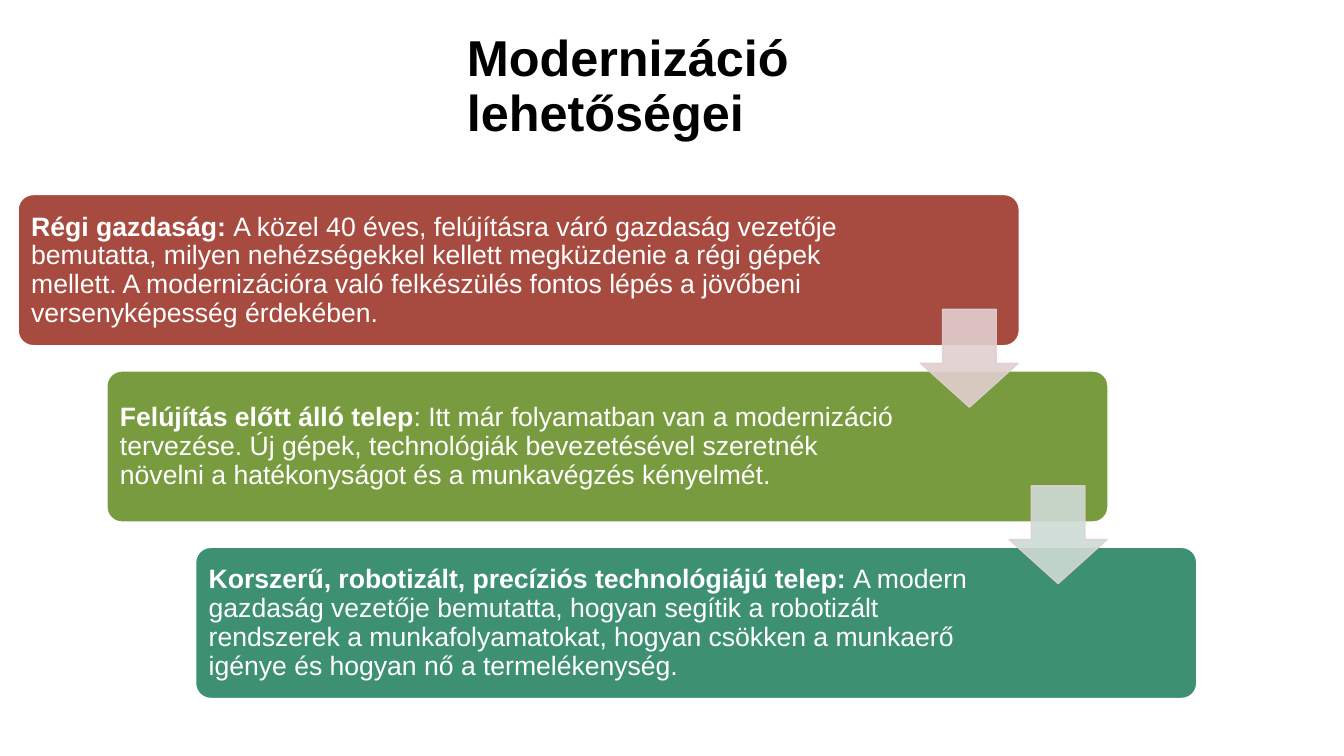
from dataclasses import dataclass

from lxml.etree import SubElement
from pptx import Presentation
from pptx.dml.color import RGBColor
from pptx.enum.shapes import MSO_SHAPE
from pptx.enum.text import MSO_ANCHOR, MSO_AUTO_SIZE, PP_ALIGN
from pptx.oxml.ns import qn
from pptx.util import Inches, Pt


@dataclass(frozen=True)
class Theme:
    """Colours, font and type sizes of the slide."""
    font: str = "Arial"
    title_size: int = 36
    body_size: int = 19
    title_color: str = "000000"
    body_color: str = "FFFFFF"
    step_edge: str = "FFFFFF"
    arrow_edge: str = "E1D0CF"
    step_fills: tuple = ("A74B40", "799B3F", "3D9072")
    arrow_fills: tuple = ("E1D0CF", "CEDBD5")
    arrow_opacity: int = 90


THEME = Theme()
TITLE = "Modernizáció lehetőségei"
STEPS = (
    ("Régi gazdaság: ",
     "A közel 40 éves, felújításra váró gazdaság vezetője bemutatta, milyen "
     "nehézségekkel kellett megküzdenie a régi gépek mellett. A modernizációra "
     "való felkészülés fontos lépés a jövőbeni versenyképesség érdekében.", 8.31),
    ("Felújítás előtt álló telep",
     ": Itt már folyamatban van a modernizáció tervezése. Új gépek, technológiák "
     "bevezetésével szeretnék növelni a hatékonyságot és a munkavégzés kényelmét.",
     7.99),
    ("Korszerű, robotizált, precíziós technológiájú telep: ",
     "A modern gazdaság vezetője bemutatta, hogyan segítik a robotizált rendszerek "
     "a munkafolyamatokat, hogyan csökken a munkaerő igénye és hogyan nő a "
     "termelékenység.", 7.99),
)
STEP_LEFT, STEP_TOP, STEP_WIDTH, STEP_HEIGHT = 0.18, 1.93, 9.93, 1.5
SHIFT_X, SHIFT_Y = 0.88, 1.75
ARROW_LEFT, ARROW_TOP, ARROW_SIZE = 9.13, 3.07, 0.97
TEXT_OFFSET, TEXT_HEIGHT, TEXT_INSET = 0.05, 1.41, 0.08


def add_run(paragraph, text, size, color, bold):
    """Append one formatted run to a paragraph."""
    run = paragraph.add_run()
    run.text = text
    run.font.name = THEME.font
    run.font.size = Pt(size)
    run.font.bold = bold
    run.font.color.rgb = RGBColor.from_string(color)


def add_block(slide, preset, box, fill, edge, adjustments):
    """Add a filled preset shape with a thin outline."""
    block = slide.shapes.add_shape(preset, *map(Inches, box))
    block.shadow.inherit = False
    block.fill.solid()
    block.fill.fore_color.rgb = RGBColor.from_string(fill)
    block.line.color.rgb = RGBColor.from_string(edge)
    block.line.width = Pt(1)
    for position, value in enumerate(adjustments):
        block.adjustments[position] = value
    return block


def set_title(slide):
    """Place and format the title placeholder."""
    title = slide.shapes.title
    title.left, title.top = Inches(4.53), Inches(0.28)
    title.width, title.height = Inches(3.82), Inches(1.37)
    frame = title.text_frame
    frame.word_wrap = True
    frame.auto_size = MSO_AUTO_SIZE.NONE
    frame.vertical_anchor = MSO_ANCHOR.TOP
    heading = frame.paragraphs[0]
    heading.alignment = PP_ALIGN.LEFT
    heading.line_spacing = 0.9
    add_run(heading, TITLE, THEME.title_size, THEME.title_color, True)


def add_step(slide, index, label, description, text_width):
    """Add one stair step with its bold label and description."""
    left, top = STEP_LEFT + index * SHIFT_X, STEP_TOP + index * SHIFT_Y
    add_block(slide, MSO_SHAPE.ROUNDED_RECTANGLE,
              (left, top, STEP_WIDTH, STEP_HEIGHT),
              THEME.step_fills[index], THEME.step_edge, (0.1,))
    caption = slide.shapes.add_textbox(
        Inches(left + TEXT_OFFSET), Inches(top + TEXT_OFFSET),
        Inches(text_width), Inches(TEXT_HEIGHT))
    frame = caption.text_frame
    frame.word_wrap = True
    frame.vertical_anchor = MSO_ANCHOR.MIDDLE
    frame.margin_left = frame.margin_right = Inches(TEXT_INSET)
    frame.margin_top = frame.margin_bottom = Inches(TEXT_INSET)
    paragraph = frame.paragraphs[0]
    paragraph.line_spacing = 0.9
    add_run(paragraph, label, THEME.body_size, THEME.body_color, True)
    add_run(paragraph, description, THEME.body_size, THEME.body_color, False)


def add_arrow(slide, index):
    """Add a translucent arrow leading to the next step."""
    box = (ARROW_LEFT + index * SHIFT_X, ARROW_TOP + index * SHIFT_Y,
           ARROW_SIZE, ARROW_SIZE)
    arrow = add_block(slide, MSO_SHAPE.DOWN_ARROW, box,
                      THEME.arrow_fills[index], THEME.arrow_edge, (0.55, 0.45))
    for color in arrow.element.spPr.iter(qn("a:srgbClr")):
        SubElement(color, qn("a:alpha"), val=str(THEME.arrow_opacity * 1000))


def main():
    """Build the slide and save it."""
    deck = Presentation()
    deck.slide_width, deck.slide_height = Inches(13.33), Inches(7.5)
    slide = deck.slides.add_slide(deck.slide_layouts.get_by_name("Title Only"))
    set_title(slide)
    for index, step in enumerate(STEPS):
        add_step(slide, index, *step)
    for index in range(len(THEME.arrow_fills)):
        add_arrow(slide, index)
    deck.save("out.pptx")


if __name__ == "__main__":
    main()
